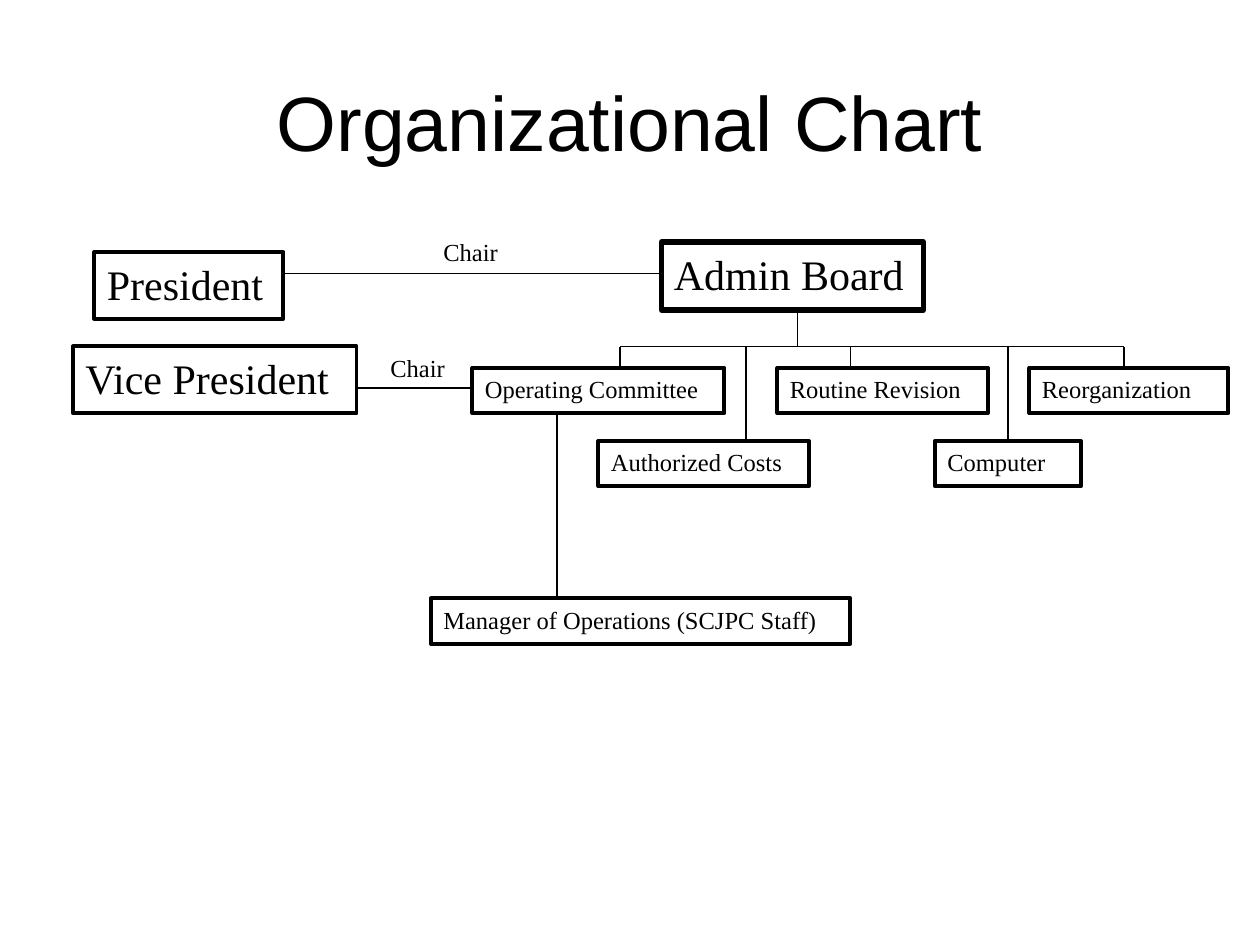
from lxml import etree
from pptx import Presentation
from pptx.dml.color import RGBColor
from pptx.enum.shapes import MSO_CONNECTOR, MSO_SHAPE
from pptx.enum.text import MSO_ANCHOR, MSO_AUTO_SIZE, PP_ALIGN
from pptx.oxml.ns import qn
from pptx.util import Inches, Pt

BLACK = RGBColor(0x00, 0x00, 0x00)
WHITE = RGBColor(0xFF, 0xFF, 0xFF)
RECTANGLE = MSO_SHAPE.RECTANGLE
STRAIGHT = MSO_CONNECTOR.STRAIGHT
TOP, MIDDLE = MSO_ANCHOR.TOP, MSO_ANCHOR.MIDDLE
LEFT, CENTER = PP_ALIGN.LEFT, PP_ALIGN.CENTER
GROW = MSO_AUTO_SIZE.SHAPE_TO_FIT_TEXT
TOP_SIDE = 0


class OrgChart:
    title_font = "Arial"
    body_font = "Times New Roman"

    def __init__(self, slide):
        self.slide = slide

    def add_text(self, shape, text, size, font, align=LEFT, anchor=TOP):
        frame = shape.text_frame
        frame.word_wrap = True
        frame.vertical_anchor = anchor
        paragraph = frame.paragraphs[0]
        paragraph.alignment = align
        run = paragraph.add_run()
        run.text = text
        run.font.name = font
        run.font.size = Pt(size)
        run.font.color.rgb = BLACK
        return frame

    def title(self, text, left, top, width, height):
        box = self.slide.shapes.add_textbox(
            Inches(left), Inches(top), Inches(width), Inches(height))
        self.add_text(box, text, 44, self.title_font, CENTER, MIDDLE)

    def label(self, text, left, top):
        box = self.slide.shapes.add_textbox(
            Inches(left), Inches(top), Inches(0.67), Inches(0.33))
        self.add_text(box, text, 14, self.body_font).auto_size = GROW

    def unit(self, text, left, top, width, height=0.36, size=14, border=2.25):
        box = self.slide.shapes.add_shape(
            RECTANGLE, Inches(left), Inches(top), Inches(width), Inches(height))
        box.shadow.inherit = False
        box.fill.solid()
        box.fill.fore_color.rgb = WHITE
        box.line.color.rgb = BLACK
        box.line.width = Pt(border)
        self.add_text(box, text, size, self.body_font).auto_size = GROW
        return box

    def line(self, x1, y1, x2, y2):
        connector = self.slide.shapes.add_connector(
            STRAIGHT, Inches(x1), Inches(y1), Inches(x2), Inches(y2))
        connector.line.color.rgb = BLACK
        connector.line.width = Pt(0.75)
        etree.SubElement(connector._element.spPr, qn("a:effectLst"))
        return connector


def main():
    deck = Presentation()
    deck.slide_width, deck.slide_height = Inches(10), Inches(7.5)
    chart = OrgChart(deck.slides.add_slide(deck.slide_layouts[6]))

    chart.title("Organizational Chart", 0.75, 0.33, 8.5, 1.25)

    # Officers and board
    chart.unit("President", 0.75, 2, 1.5, 0.53, 24)
    chart.unit("Vice President", 0.58, 2.75, 2.25, 0.53, 24)
    chart.unit("Admin Board", 5.25, 1.92, 2.08, 0.54, 24, 3)

    # Committees in two staggered rows
    upper_row, lower_row = 2.92, 3.5
    chart.unit("Operating Committee", 3.75, upper_row, 2)
    chart.unit("Routine Revision", 6.17, upper_row, 1.67)
    chart.unit("Reorganization", 8.17, upper_row, 1.58)
    chart.unit("Authorized Costs", 4.75, lower_row, 1.67)
    computer = chart.unit("Computer", 7.42, lower_row, 1.16)

    # Staff
    staff_top = 4.75
    chart.unit("Manager of Operations (SCJPC Staff)", 3.42, staff_top, 3.33)

    # Chair links
    chart.line(2.25, 2.17, 5.25, 2.17)
    chart.label("Chair", 3.42, 1.83)
    chart.line(2.83, 3.08, 3.75, 3.08)
    chart.label("Chair", 3, 2.75)

    # Board down to the branch line, and a drop to each committee
    branch = 2.75
    chart.line(6.33, 2.46, 6.33, branch)
    chart.line(4.92, branch, 8.92, branch)
    for x in (4.92, 6.75, 8.92):
        chart.line(x, branch, x, upper_row)
    chart.line(5.92, branch, 5.92, lower_row)
    computer_drop = chart.line(8, branch, 8, lower_row)
    computer_drop.end_connect(computer, TOP_SIDE)

    # Operating Committee to staff
    chart.line(4.42, 3.28, 4.42, staff_top)

    deck.save("out.pptx")


if __name__ == "__main__":
    main()
